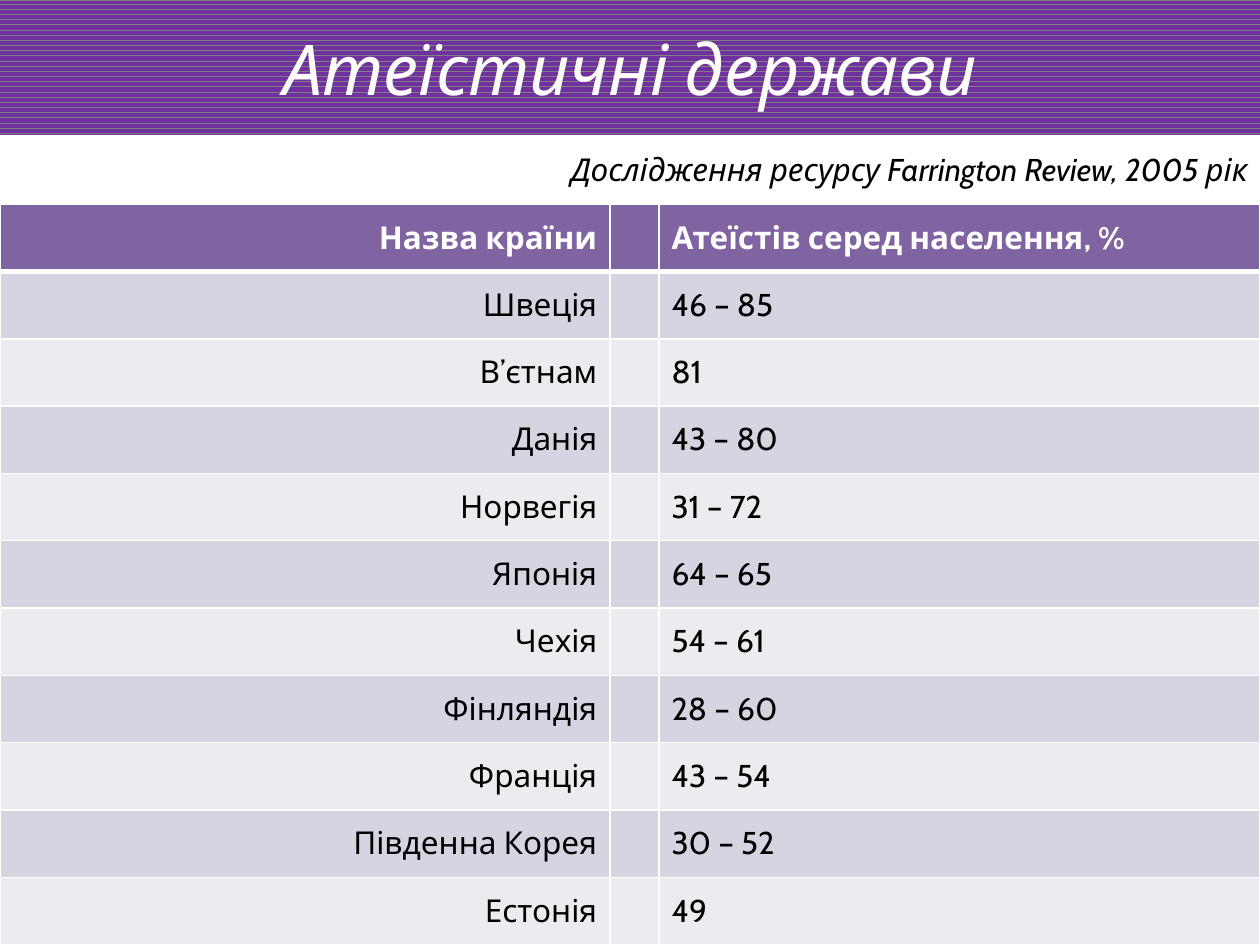
"""Build a slide with a table of the most atheistic countries."""
from dataclasses import dataclass

from lxml.etree import SubElement
from pptx import Presentation
from pptx.dml.color import RGBColor as Color
from pptx.enum.dml import MSO_PATTERN as Pattern
from pptx.enum.text import MSO_ANCHOR as Anchor, MSO_AUTO_SIZE as AutoSize, PP_ALIGN as Align
from pptx.oxml.ns import qn
from pptx.util import Inches, Pt

TITLE = "Атеїстичні держави"
SOURCE_NOTE = "Дослідження ресурсу Farrington Review, 2005 рік"
HEADER = ("Назва країни", "", "Атеїстів серед населення, %")
COUNTRIES = [
    ("Швеція", "46 – 85"),
    ("В’єтнам", "81"),
    ("Данія", "43 – 80"),
    ("Норвегія", "31 – 72"),
    ("Японія", "64 – 65"),
    ("Чехія", "54 – 61"),
    ("Фінляндія", "28 – 60"),
    ("Франція", "43 – 54"),
    ("Південна Корея", "30 – 52"),
    ("Естонія", "49"),
]
WIDTH, HEIGHT = 10, 7.5
TABLE_TOP = 1.62
COLUMN_WIDTHS = (4.84, 0.39, 4.77)
COLUMN_ALIGNS = (Align.RIGHT, Align.LEFT, Align.LEFT)


@dataclass(frozen=True)
class Theme:
    font: str = "Cabin"
    title_size: int = 40
    body_size: int = 18
    white: str = "FFFFFF"
    black: str = "000000"
    banner: str = "7030A0"
    banner_lines: str = "808080"
    header: str = "8064A2"
    bands: tuple = ("D8D3E0", "EDEAF0")


THEME = Theme()


def write(frame, text, size, color, align, bold=False, italic=False):
    frame.text = text
    para = frame.paragraphs[0]
    para.alignment = align
    for span in para.runs:
        font = span.font
        font.name, font.size = THEME.font, Pt(size)
        font.bold, font.italic = bold, italic
        font.color.rgb = Color.from_string(color)


def add_borders(cell, bottom_width):
    properties = cell._tc.get_or_add_tcPr()
    widths = {"a:lnL": 1, "a:lnR": 1, "a:lnT": 1, "a:lnB": bottom_width}
    for position, (side, width) in enumerate(widths.items()):
        line = SubElement(properties, qn(side), w=str(Pt(width)))
        fill = SubElement(line, qn("a:solidFill"))
        SubElement(fill, qn("a:srgbClr"), val=THEME.white)
        properties.insert(position, line)


def add_banner(page):
    banner = page.shapes.title
    banner.left, banner.top = Inches(0), Inches(0)
    banner.width, banner.height = Inches(WIDTH), Inches(1.07)
    banner.fill.patterned()
    banner.fill.pattern = Pattern.DARK_HORIZONTAL
    banner.fill.fore_color.rgb = Color.from_string(THEME.banner)
    banner.fill.back_color.rgb = Color.from_string(THEME.banner_lines)
    frame = banner.text_frame
    frame.auto_size = AutoSize.NONE
    frame.vertical_anchor = Anchor.MIDDLE
    write(frame, TITLE, THEME.title_size, THEME.white, Align.CENTER, italic=True)


def add_source_note(page):
    box = page.shapes.add_textbox(Inches(0), Inches(1.14), Inches(WIDTH), Inches(0.4))
    frame = box.text_frame
    frame.word_wrap = True
    frame.auto_size = AutoSize.SHAPE_TO_FIT_TEXT
    write(frame, SOURCE_NOTE, THEME.body_size, THEME.black, Align.RIGHT, italic=True)


def add_country_table(page):
    rows = [HEADER] + [(country, "", share) for country, share in COUNTRIES]
    table = page.shapes.add_table(
        len(rows), len(HEADER), Inches(0), Inches(TABLE_TOP),
        Inches(WIDTH), Inches(HEIGHT - TABLE_TOP)).table
    for column, width in zip(table.columns, COLUMN_WIDTHS):
        column.width = Inches(width)
    for row_index, row in enumerate(rows):
        is_header = row_index == 0
        fill = THEME.header if is_header else THEME.bands[(row_index - 1) % 2]
        color = THEME.white if is_header else THEME.black
        for column_index, text in enumerate(row):
            cell = table.cell(row_index, column_index)
            cell.fill.solid()
            cell.fill.fore_color.rgb = Color.from_string(fill)
            cell.vertical_anchor = Anchor.MIDDLE
            write(cell.text_frame, text, THEME.body_size, color,
                  COLUMN_ALIGNS[column_index], bold=is_header)
            add_borders(cell, 3 if is_header else 1)


def main():
    deck = Presentation()
    deck.slide_width, deck.slide_height = Inches(WIDTH), Inches(HEIGHT)
    page = deck.slides.add_slide(deck.slide_layouts.get_by_name("Title Only"))
    add_banner(page)
    add_country_table(page)
    add_source_note(page)
    deck.save("out.pptx")


if __name__ == "__main__":
    main()
